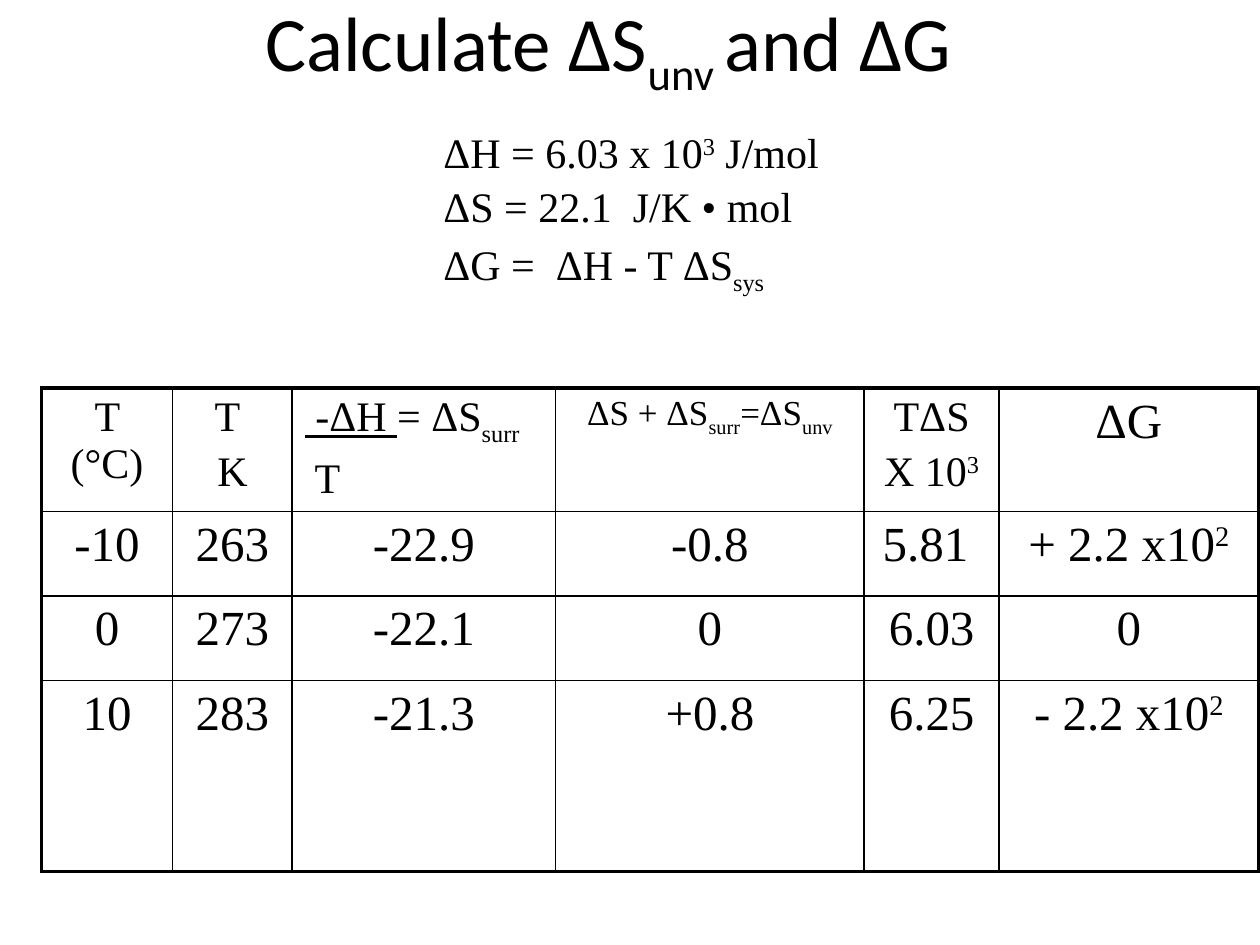
from lxml import etree
from pptx import Presentation
from pptx.dml.color import RGBColor
from pptx.enum.text import MSO_ANCHOR, PP_ALIGN
from pptx.oxml.ns import qn
from pptx.util import Inches, Pt

LEFT, CENTER = PP_ALIGN.LEFT, PP_ALIGN.CENTER
MIDDLE = MSO_ANCHOR.MIDDLE
BLACK = RGBColor(0, 0, 0)
SERIF, SANS = "Times New Roman", "Calibri"
SUB, SUP = -25000, 30000
THIN, THICK = Pt(1), Pt(2.25)

COLS = [1.04, 0.95, 2.09, 2.45, 1.07, 2.06]
ROWS = [0.98, 0.67, 0.67, 1.52]
HEADS = [
    (24, CENTER, [["T (°C)"]]),
    (24, CENTER, [["T "], ["K"]]),
    (24, LEFT, [[(" -ΔH ", 0, True), "= ΔS", ("surr", SUB)], [" T"]]),
    (20, CENTER, [["ΔS + ΔS", ("surr", SUB), "=ΔS", ("unv", SUB)]]),
    (24, CENTER, [["TΔS"], ["X 10", ("3", SUP)]]),
    (28, CENTER, [["ΔG"]]),
]
VALUES = [
    [["-10"], ["263"], ["-22.9"], ["-0.8"], ["5.81 "], ["+ 2.2 x10", ("2", SUP)]],
    [["0"], ["273"], ["-22.1"], ["0"], ["6.03"], ["0"]],
    [["10"], ["283"], ["-21.3"], ["+0.8"], ["6.25"], ["- 2.2 x10", ("2", SUP)]],
]
FORMULAS = [
    ["ΔH = 6.03 x 10", ("3", SUP), " J/mol"],
    ["ΔS = 22.1  J/K • mol"],
    ["ΔG =  ΔH - T ΔS", ("sys", SUB)],
]


def add_run(p, part, size, font):
    text, base, underline = ((part,) if isinstance(part, str) else part) + (0, False)[
        (0 if isinstance(part, str) else len(part) - 1):]
    r = p.add_run()
    r.text = text
    r.font.size, r.font.name = Pt(size), font
    r.font.color.rgb = BLACK
    if base:
        r.font._element.set("baseline", str(base))
    if underline:
        r.font.underline = True


def write(tf, paragraphs, size, font=SERIF, align=LEFT, spacing=1.0, before=20):
    for i, parts in enumerate(paragraphs):
        p = tf.add_paragraph() if i else tf.paragraphs[0]
        p.alignment, p.line_spacing = align, spacing
        gap = etree.Element(qn("a:spcBef"))
        etree.SubElement(gap, qn("a:spcPct"), val=str(before * 1000))
        p._p.get_or_add_pPr().insert(1, gap)
        for part in parts:
            add_run(p, part, size, font)


def set_borders(cell, widths):
    tcPr = cell._tc.get_or_add_tcPr()
    for i, (side, width) in enumerate(widths.items()):
        ln = etree.Element(qn("a:ln" + side), w=str(width))
        fill = etree.SubElement(ln, qn("a:solidFill"))
        etree.SubElement(fill, qn("a:srgbClr"), val=str(BLACK))
        tcPr.insert(i, ln)


def add_title(s, box):
    sp = s.shapes.title
    sp.left, sp.top, sp.width, sp.height = box
    sp.text_frame.vertical_anchor = MIDDLE
    write(sp.text_frame, [["Calculate ΔS", ("unv ", SUB), "and ΔG"]],
          44, SANS, CENTER, before=0)


def add_formulas(s, box):
    tf = s.shapes.add_textbox(*box).text_frame
    tf.word_wrap = False
    write(tf, FORMULAS, 24, spacing=0.9)


def add_results(s, box):
    left, top, width, height = box
    tbl = s.shapes.add_table(len(ROWS), len(COLS), *box).table
    tbl.first_row = tbl.horz_banding = False
    for col, share in zip(tbl.columns, COLS):
        col.width = int(width * share / sum(COLS))
    for row, share in zip(tbl.rows, ROWS):
        row.height = int(height * share / sum(ROWS))
    body = [[(28, CENTER, [parts]) for parts in row] for row in VALUES]
    for i, row in enumerate([HEADS] + body):
        for j, (size, align, paragraphs) in enumerate(row):
            cell = tbl.cell(i, j)
            cell.fill.background()
            write(cell.text_frame, paragraphs, size, align=align)
            set_borders(cell, {
                "L": THICK if j == 0 else THIN,
                "R": THICK if j == len(COLS) - 1 else THIN,
                "T": THICK if i == 0 else THIN,
                "B": THICK if i == len(ROWS) - 1 else THIN,
            })


def main():
    prs = Presentation()
    prs.slide_width, prs.slide_height = Inches(10), Inches(7.5)
    s = prs.slides.add_slide(prs.slide_layouts[5])
    add_title(s, [Inches(v) for v in (0.58, -0.25, 8.5, 1.25)])
    add_results(s, [Inches(v) for v in (0.33, 3.08, sum(COLS), sum(ROWS))])
    add_formulas(s, [Inches(v) for v in (3.42, 1, 3.27, 1.78)])
    prs.save("out.pptx")


if __name__ == "__main__":
    main()
